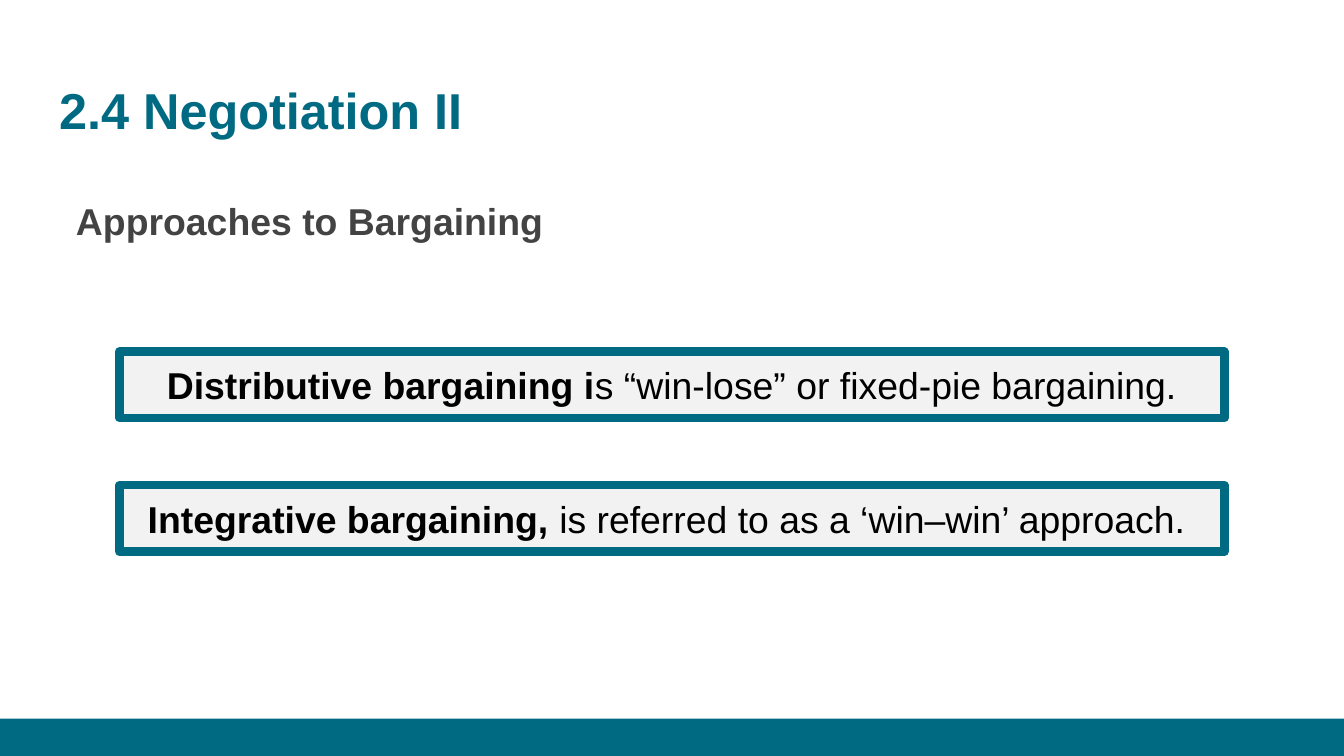
import pptx
import pptx.dml.color
import pptx.enum.shapes
import pptx.enum.text
import pptx.oxml.ns
import pptx.util
from lxml import etree

Pt = pptx.util.Pt
Anchor = pptx.enum.text.MSO_ANCHOR
Align = pptx.enum.text.PP_ALIGN
Rgb = pptx.dml.color.RGBColor.from_string
RECTANGLE = pptx.enum.shapes.MSO_SHAPE.RECTANGLE

THEME = {
    "font": "Arial",
    "teal": "006A83", "panel": "F2F2F2", "heading": "434343", "text": "000000",
    "title_size": 27, "text_size": 20,
}


def write_text(box, *parts, size, color, margins, align=Align.LEFT,
               anchor=Anchor.TOP, indent=0):
    """Write one paragraph from (text, bold) parts; margins are (side, top, bottom)."""
    frame = box.text_frame
    frame.word_wrap = True
    frame.auto_size = pptx.enum.text.MSO_AUTO_SIZE.NONE
    frame.vertical_anchor = anchor
    side, top, bottom = margins
    frame.margin_left = frame.margin_right = Pt(side)
    frame.margin_top, frame.margin_bottom = Pt(top), Pt(bottom)
    para = frame.paragraphs[0]
    para.alignment = align
    para.space_before = Pt(0)
    settings = para._p.get_or_add_pPr()
    settings.set("marL", str(Pt(indent)))
    settings.set("indent", "0")
    etree.SubElement(settings, pptx.oxml.ns.qn("a:buNone"))
    for text, bold in parts:
        span = para.add_run()
        span.text = text
        span.font.name = THEME["font"]
        span.font.size = Pt(size)
        span.font.bold = bold
        span.font.color.rgb = Rgb(color)


def add_rectangle(page, left, top, width, height, fill):
    box = page.shapes.add_shape(RECTANGLE, Pt(left), Pt(top), Pt(width), Pt(height))
    box.shadow.inherit = False
    box.fill.solid()
    box.fill.fore_color.rgb = Rgb(fill)
    box.line.fill.background()
    return box


deck = pptx.Presentation()
deck.slide_width, deck.slide_height = Pt(720), Pt(405)
page = deck.slides.add_slide(deck.slide_layouts[1])

# Footer band
add_rectangle(page, 0, 385, 720, 20, THEME["teal"])

# Title and section heading
title, body = page.placeholders
for box, top, height in ((title, 32.4, 47.5), (body, 97.2, 262.8)):
    box.left, box.top, box.width, box.height = Pt(24.5), Pt(top), Pt(671), Pt(height)
write_text(title, ("2.4 Negotiation II", True), size=THEME["title_size"],
           color=THEME["teal"], margins=(7.2, 10, 7.2))
write_text(body, ("Approaches to Bargaining", True), size=THEME["text_size"],
           color=THEME["heading"], margins=(7.2, 9, 7.2), indent=9)

# Definition panels
definitions = [
    (("Distributive bargaining i", True),
     ("s “win-lose” or fixed-pie bargaining.", False)),
    (("Integrative bargaining, ", True),
     ("is referred to as a ‘win–win’ approach. ", False)),
]
for row, parts in enumerate(definitions):
    panel = add_rectangle(page, 64, 188.4 + row * 71.6, 592, 35.6, THEME["panel"])
    panel.line.color.rgb = Rgb(THEME["teal"])
    panel.line.width = Pt(4.5)
    etree.SubElement(panel.line._get_or_add_ln(), pptx.oxml.ns.qn("a:round"))
    write_text(panel, *parts, size=THEME["text_size"], color=THEME["text"],
               margins=(9, 5.8, 5.8), align=Align.CENTER, anchor=Anchor.MIDDLE)

deck.save("out.pptx")
